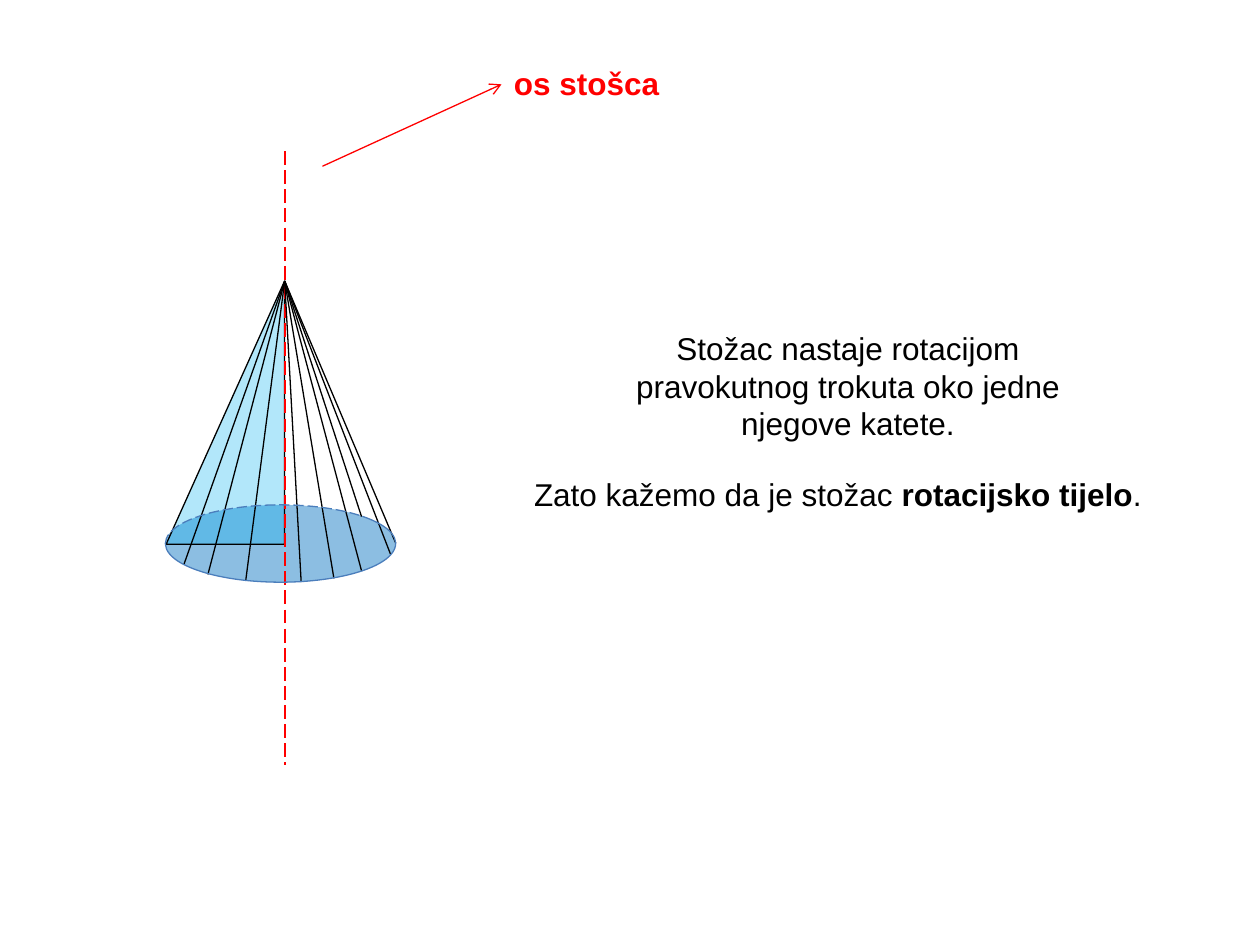
from itertools import pairwise
from math import atan2, degrees
from typing import NamedTuple

from lxml import etree
from pptx import Presentation
from pptx.dml.color import RGBColor
from pptx.enum.dml import MSO_LINE
from pptx.enum.shapes import MSO_CONNECTOR, MSO_SHAPE
from pptx.enum.text import MSO_AUTO_SIZE, PP_ALIGN
from pptx.oxml.ns import qn
from pptx.util import Pt

STRAIGHT = MSO_CONNECTOR.STRAIGHT
ARC, OVAL, TRIANGLE = MSO_SHAPE.ARC, MSO_SHAPE.OVAL, MSO_SHAPE.RIGHT_TRIANGLE
DASH = MSO_LINE.LONG_DASH
LEFT, CENTER = PP_ALIGN.LEFT, PP_ALIGN.CENTER
GROW = MSO_AUTO_SIZE.SHAPE_TO_FIT_TEXT
BLACK, RED, RIM = "000000", "FF0000", "4B7EBC"


class Point(NamedTuple):
    x: float
    y: float


class Box(NamedTuple):
    x: float
    y: float
    w: float
    h: float


class Label(NamedTuple):
    box: Box
    runs: list[tuple[str, bool]]
    color: str = BLACK
    align: PP_ALIGN = LEFT


APEX = Point(162.7, 160.6)
START = Point(95, 311)
FRONT = [Point(105.1, 322.6), Point(118.8, 328.3), Point(140.4, 331.9),
         Point(172.1, 332.6), Point(190.8, 330.5), Point(206.6, 326.2),
         Point(223.2, 316.8)]
EDGE = Point(226.1, 310.3)
BACK = Point(206.6, 295.2)
BASE = Box(94.5, 288.5, 131.6, 44.2)

LABELS = [
    Label(Box(329.8, 184.3, 309.6, 72.7),
          [("Stožac nastaje rotacijom pravokutnog trokuta oko jedne "
            "njegove katete.", False)], align=CENTER),
    Label(Box(298.1, 267.8, 391.7, 29),
          [("Zato kažemo da je stožac ", False), ("rotacijsko tijelo", True),
           (".", False)]),
    Label(Box(286.6, 33.1, 98.6, 30), [("os stošca", True)], RED),
]


def rgb(color: str) -> RGBColor:
    return RGBColor.from_string(color)


def stroke(item, color: str, width: float = 0.75, dash=None) -> None:
    item.line.color.rgb = rgb(color)
    item.line.width = Pt(width)
    if dash is not None:
        item.line.dash_style = dash


def line(shapes, start: Point, end: Point, color: str = BLACK,
         width: float = 0.75, dash=None, arrow: bool = False) -> None:
    link = shapes.add_connector(STRAIGHT, *map(Pt, (*start, *end)))
    stroke(link, color, width, dash)
    props = link._element.spPr
    if arrow:
        etree.SubElement(props.find(qn("a:ln")), qn("a:tailEnd"), type="arrow")
    etree.SubElement(props, qn("a:effectLst"))


def shape(shapes, kind, box: Box):
    item = shapes.add_shape(kind, *map(Pt, box))
    item.shadow.inherit = False
    return item


def tint(item, color: str, alpha: int) -> None:
    """Fill with a colour at the given percentage of opacity."""
    item.fill.solid()
    item.fill.fore_color.rgb = rgb(color)
    tone = item._element.spPr.find(qn("a:solidFill"))[0]
    etree.SubElement(tone, qn("a:alpha"), val=str(alpha * 1000))


def angle(point: Point) -> float:
    """Clockwise angle of a rim point, seen from the centre of the base."""
    dx = point.x - BASE.x - BASE.w / 2
    dy = point.y - BASE.y - BASE.h / 2
    return degrees(atan2(dy, dx)) % 360


def arc(shapes, start: Point, end: Point, dash=None) -> None:
    item = shape(shapes, ARC, BASE)
    item.fill.background()
    stroke(item, RIM, dash=dash)
    for i, point in enumerate((start, end)):
        item.adjustments[i] = angle(point) * 0.6  # 60000 units a degree


def text(shapes, label: Label) -> None:
    frame = shapes.add_textbox(*map(Pt, label.box)).text_frame
    frame.word_wrap = True
    frame.auto_size = GROW
    para = frame.paragraphs[0]
    para.alignment = label.align
    para.font.name = "Arial"
    para.font.size = Pt(18)
    para.font.color.rgb = rgb(label.color)
    for words, bold in label.runs:
        run = para.add_run()
        run.text = words
        run.font.bold = bold


def main() -> None:
    deck = Presentation()
    deck.slide_width, deck.slide_height = Pt(720), Pt(540)
    shapes = deck.slides.add_slide(deck.slide_layouts[6]).shapes

    base = shape(shapes, OVAL, BASE)
    tint(base, "0070C0", 45)
    base.line.fill.background()
    line(shapes, APEX, EDGE)

    for label in LABELS:
        text(shapes, label)
    line(shapes, Point(184.3, 95), Point(286.6, 48.2), RED, arrow=True)

    half = shape(shapes, TRIANGLE,
                 Box(START.x, APEX.y, APEX.x - START.x, START.y - APEX.y))
    half._element.spPr.find(qn("a:xfrm")).set("flipH", "1")
    tint(half, "00B0F0", 30)
    stroke(half, BLACK)

    line(shapes, Point(APEX.x, 86.4), Point(APEX.x, 437), RED, 1, DASH)
    for foot in [*FRONT, BACK]:
        line(shapes, APEX, foot)

    for end, start in pairwise([START, *FRONT, EDGE, BACK]):
        arc(shapes, start, end)
    arc(shapes, START, BACK, DASH)

    deck.save("out.pptx")


if __name__ == "__main__":
    main()
